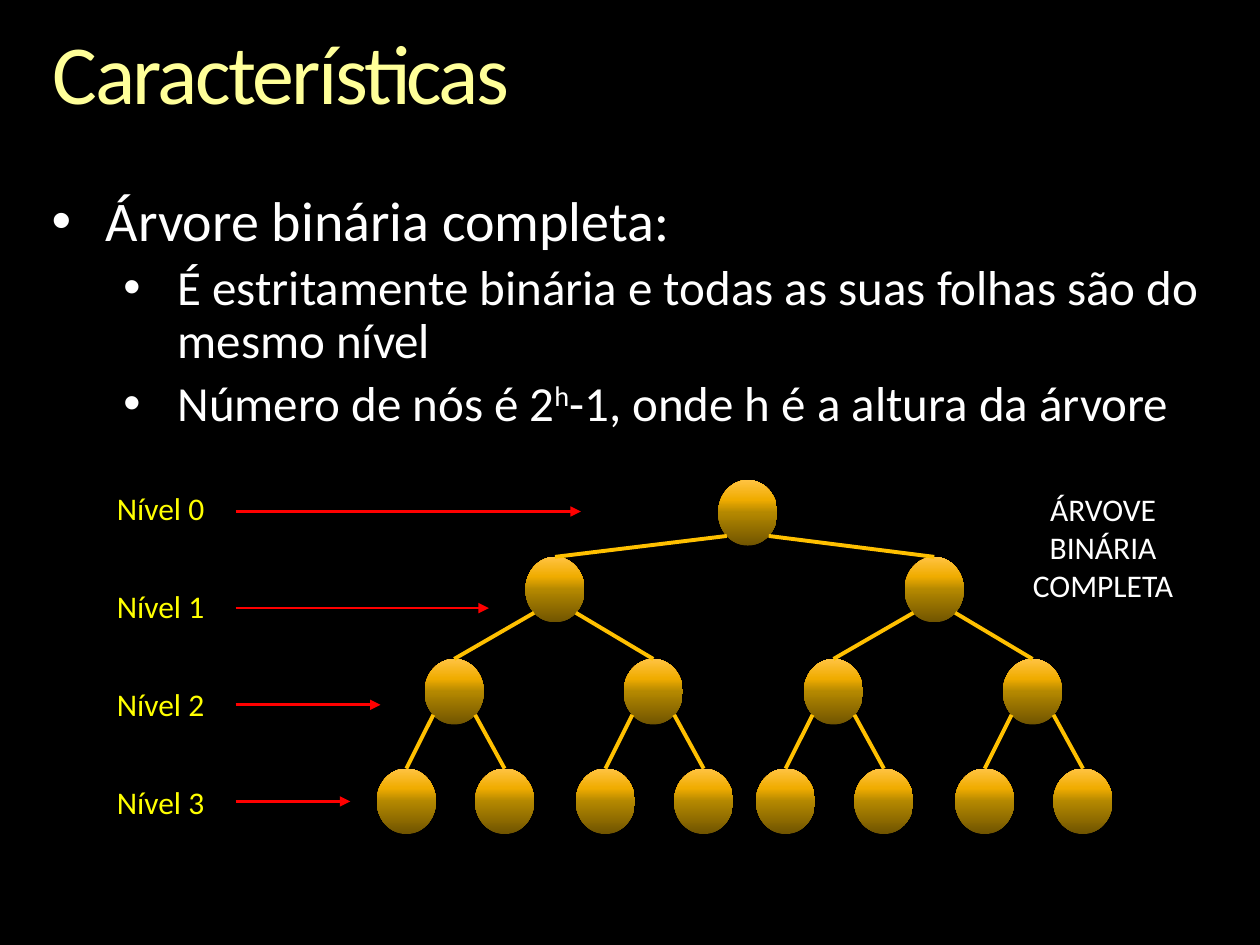
from dataclasses import dataclass
from math import sqrt

from lxml.etree import SubElement
from pptx import Presentation
from pptx.dml.color import RGBColor
from pptx.enum.shapes import MSO_CONNECTOR, MSO_SHAPE
from pptx.enum.text import MSO_ANCHOR, PP_ALIGN
from pptx.oxml.ns import qn
from pptx.util import Inches, Pt


@dataclass(frozen=True)
class Theme:
    font: str = "Calibri"
    background: str = "000000"
    text: str = "FFFFFF"
    label: str = "FFFF00"
    arrow: str = "FF0000"
    branch: str = "FFC000"
    title_stops: tuple = ((0, "FFFFB9"), (36, "FFFF99"), (86, "F6AE1E"))
    node_stops: tuple = ((0, "705400"), (50, "B48800"), (70, "F0AC00"), (100, "FFC342"))
    title_size: float = 48
    bullet_sizes: tuple = (32, 28)
    label_size: float = 18
    branch_width: float = 2.25
    arrow_width: float = 1.5


THEME = Theme()
NODE_WIDTH, NODE_HEIGHT = 0.47, 0.52
LEVEL_TOPS = (0, 0.61, 1.42, 2.29)
CHILD_OFFSETS = ((-1.53, 1.48), (-0.8, 0.78), (-0.38, 0.4))


def apply_format(target, values):
    for name, value in values.items():
        setattr(target, name, value)


def format_font(font, size, color=None):
    apply_format(font, {"name": THEME.font, "size": Pt(size)})
    if color:
        font.color.rgb = RGBColor.from_string(color)


def set_gradient(fill, properties, stops, angle):
    fill.gradient()
    fill.gradient_angle = angle
    stop_list = properties.find(qn("a:gradFill")).find(qn("a:gsLst"))
    for stop in list(stop_list):
        stop_list.remove(stop)
    for position, color in stops:
        stop = SubElement(stop_list, qn("a:gs"), pos=str(position * 1000))
        SubElement(stop, qn("a:srgbClr"), val=color)


def set_bullet(paragraph, left, hanging):
    properties = paragraph._p.get_or_add_pPr()
    properties.set("marL", str(Inches(left)))
    properties.set("indent", str(-Inches(hanging)))
    SubElement(properties, qn("a:buFont"), typeface="Arial")
    SubElement(properties, qn("a:buChar"), char="•")


def add_text_box(slide, box, margins=None):
    frame = slide.shapes.add_textbox(*map(Inches, box)).text_frame
    apply_format(frame, {"word_wrap": True, **(margins or {})})
    return frame


def no_margins():
    return {f"margin_{side}": 0 for side in ("left", "top", "right", "bottom")}


def add_line(slide, start, end, color, width, arrow=False):
    line = slide.shapes.add_connector(MSO_CONNECTOR.STRAIGHT, *map(Inches, (*start, *end)))
    line.line.color.rgb = RGBColor.from_string(color)
    line.line.width = Pt(width)
    if arrow:
        SubElement(line.line._get_or_add_ln(), qn("a:tailEnd"), type="triangle")
    SubElement(line._element.spPr, qn("a:effectLst"))
    return line


def add_title(slide, box, text):
    title = slide.shapes.title
    apply_format(title, dict(zip(("left", "top", "width", "height"), map(Inches, box))))
    apply_format(title.text_frame, {**no_margins(), "vertical_anchor": MSO_ANCHOR.TOP, "word_wrap": True})
    paragraph = title.text_frame.paragraphs[0]
    apply_format(paragraph, {"alignment": PP_ALIGN.LEFT, "line_spacing": 0.9})
    run = paragraph.add_run()
    run.text = text
    format_font(run.font, THEME.title_size)
    properties = run._r.get_or_add_rPr()
    properties.set("spc", "-150")
    set_gradient(run.font.fill, properties, THEME.title_stops, 270)


def add_bullets(slide, box, items):
    frame = add_text_box(slide, box, no_margins())
    for index, (level, pieces) in enumerate(items):
        paragraph = frame.add_paragraph() if index else frame.paragraphs[0]
        size = THEME.bullet_sizes[level]
        set_bullet(paragraph, (0.43, 1)[level], 0.43)
        apply_format(paragraph, {
            "level": level,
            "line_spacing": 0.9,
            "space_before": Pt(0.2 * size if index else 0),
        })
        for text, raised in pieces:
            run = paragraph.add_run()
            run.text = text
            format_font(run.font, size, THEME.text)
            if raised:
                run._r.get_or_add_rPr().set("baseline", "30000")


def add_centered_lines(slide, box, lines, color, gap=0):
    frame = add_text_box(slide, box)
    for index, text in enumerate(lines):
        paragraph = frame.add_paragraph() if index else frame.paragraphs[0]
        paragraph.text = text
        apply_format(paragraph, {"alignment": PP_ALIGN.CENTER, "space_before": Pt(gap if index else 0)})
        format_font(paragraph.font, THEME.label_size, color)


def add_node(slide, left, top):
    node = slide.shapes.add_shape(MSO_SHAPE.OVAL, *map(Inches, (left, top, NODE_WIDTH, NODE_HEIGHT)))
    node.shadow.inherit = False
    node.line.fill.background()
    set_gradient(node.fill, node._element.spPr, THEME.node_stops, 90)
    return node


def add_tree(slide, left, tree_top, level=0):
    top = tree_top + LEVEL_TOPS[level]
    node = add_node(slide, left, top)
    if level == len(CHILD_OFFSETS):
        return node
    center = left + NODE_WIDTH / 2
    branch_top = top + NODE_HEIGHT / 2 * (1 + 1 / sqrt(2))
    reach = NODE_WIDTH / 2 / sqrt(2)
    for side, offset in zip((-1, 1), CHILD_OFFSETS[level]):
        child = add_tree(slide, left + offset, tree_top, level + 1)
        start = (center + side * reach, branch_top)
        end = (center + offset, tree_top + LEVEL_TOPS[level + 1])
        branch = add_line(slide, start, end, THEME.branch, THEME.branch_width)
        branch.end_connect(child, 0)
    return node


def add_level_labels(slide, box, arrow_ends):
    left, top, width, _ = box
    labels = [f"Nível {level}" for level in range(len(arrow_ends))]
    add_centered_lines(slide, box, labels, THEME.label, gap=34.5)
    arrow_left = left + width - 0.12
    for level, end in enumerate(arrow_ends):
        arrow_y = top + 0.23 + 0.767 * level
        add_line(slide, (arrow_left, arrow_y), (end, arrow_y), THEME.arrow, THEME.arrow_width, arrow=True)


def build_slide(presentation):
    slide = presentation.slides.add_slide(presentation.slide_layouts[5])
    fill = slide.background.fill
    fill.solid()
    fill.fore_color.rgb = RGBColor.from_string(THEME.background)
    add_title(slide, (0.42, 0.25, 9.17, 0.73), "Características")
    add_bullets(slide, (0.41, 1.53, 9.17, 1.95), [
        (0, [("Árvore binária completa:", False)]),
        (1, [("É estritamente binária e todas as suas folhas são do mesmo nível", False)]),
        (1, [("Número de nós é 2", False), ("h", True), ("-1, onde h é a altura da árvore", False)]),
    ])
    add_tree(slide, 5.7, 3.81)
    add_centered_lines(slide, (8.04, 3.84, 1.43, 1.01), ["ÁRVOVE BINÁRIA COMPLETA"], THEME.text)
    add_level_labels(slide, (0.56, 3.83, 1.43, 2.78), (4.61, 3.88, 3.02, 2.78))


def main():
    presentation = Presentation()
    apply_format(presentation, {"slide_width": Inches(10), "slide_height": Inches(7.5)})
    build_slide(presentation)
    presentation.save("out.pptx")


if __name__ == "__main__":
    main()
